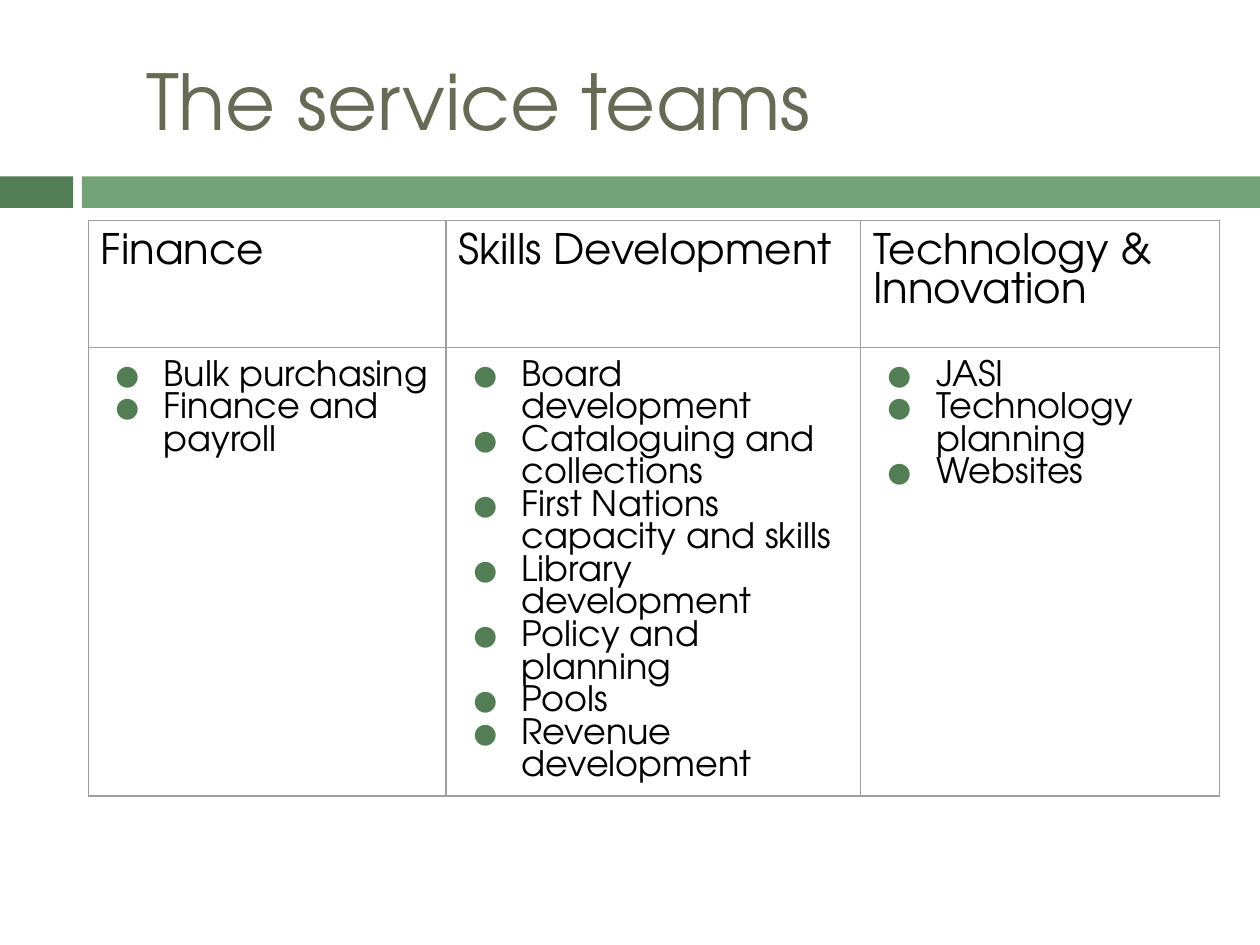
"""Build a slide with a table of the service teams and their work."""
from lxml.etree import SubElement
from pptx import Presentation
from pptx.dml.color import RGBColor
from pptx.enum.shapes import MSO_SHAPE
from pptx.enum.text import MSO_ANCHOR, PP_ALIGN
from pptx.oxml import parse_xml
from pptx.oxml.ns import nsdecls, qn
from pptx.util import Inches, Pt

FONT = "TeX Gyre Adventor"
GREEN = "527D55"
TEAMS = {
    "Finance": ["Bulk purchasing", "Finance and payroll"],
    "Skills Development": [
        "Board development", "Cataloguing and collections",
        "First Nations capacity and skills", "Library development",
        "Policy and planning", "Pools", "Revenue development"],
    "Technology & Innovation": ["JASI", "Technology planning", "Websites"],
}


def color(value):
    return RGBColor.from_string(value)


def style(para, size, tint):
    looks = {"name": FONT, "size": Pt(size), "bold": False}
    for run in para.runs:
        for key, value in looks.items():
            setattr(run.font, key, value)
        run.font.color.rgb = color(tint)


deck = Presentation()
deck.slide_width, deck.slide_height = Inches(10), Inches(7.5)
slide = deck.slides.add_slide(deck.slide_layouts[5])

for left, width, tint in [(0, 0.58, GREEN), (0.65, 9.35, "72A376")]:
    bar = slide.shapes.add_shape(
        MSO_SHAPE.RECTANGLE, Inches(left), Inches(1.4), Inches(width), Inches(0.25))
    bar.shadow.inherit = False
    bar.fill.solid()
    bar.fill.fore_color.rgb = color(tint)
    bar.line.fill.background()

title = slide.shapes.title
place = {"left": 1.06, "top": 0.25, "width": 8.52, "height": 1.08}
for key, value in place.items():
    setattr(title, key, Inches(value))
frame = title.text_frame
frame.text = "The service teams"
frame.vertical_anchor = MSO_ANCHOR.MIDDLE
sides = ["margin_left", "margin_top", "margin_right", "margin_bottom"]
for side in sides:
    setattr(frame, side, Inches(0.1))
frame.paragraphs[0].alignment = PP_ALIGN.LEFT
style(frame.paragraphs[0], 44, "676A55")

table = slide.shapes.add_table(
    2, len(TEAMS), Inches(0.7), Inches(1.75), Inches(8.98), Inches(4.54)).table
table.first_row = table.horz_banding = False
for col, width in zip(table.columns, [2.84, 3.29, 2.85]):
    col.width = Inches(width)
for row, height in zip(table.rows, [1.01, 3.53]):
    row.height = Inches(height)

for col, (team, tasks) in enumerate(TEAMS.items()):
    for row, lines in enumerate([[team], tasks]):
        cell = table.cell(row, col)
        for side in sides:
            setattr(cell, side, Inches(0.1))
        cell.text = "\n".join(lines)
        for para in cell.text_frame.paragraphs:
            if row:
                props = para._p.get_or_add_pPr()
                props.set("marL", str(Inches(0.5)))
                props.set("indent", str(Inches(-0.39)))
                tone = SubElement(props, qn("a:buClr"))
                SubElement(tone, qn("a:srgbClr"), val=GREEN)
                SubElement(props, qn("a:buFont"), typeface=FONT)
                SubElement(props, qn("a:buChar"), char="●")
            style(para, 20 if row else 24, "000000")
        props = cell._tc.get_or_add_tcPr()
        for edge in ["lnL", "lnR", "lnT", "lnB"]:
            props.append(parse_xml(
                f'<a:{edge} {nsdecls("a")} w="{Pt(0.75)}"><a:solidFill>'
                f'<a:srgbClr val="9E9E9E"/></a:solidFill></a:{edge}>'))
        cell.fill.background()

deck.save("out.pptx")
